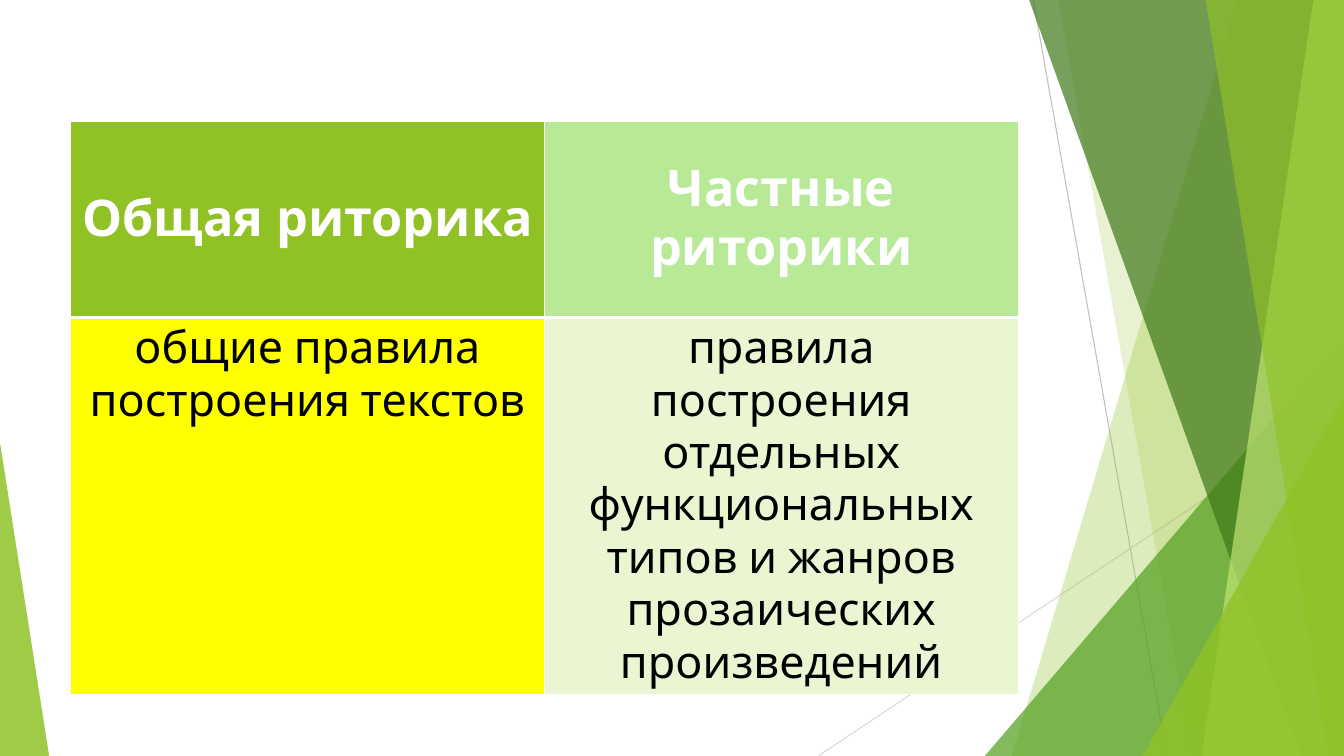
import pptx
import pptx.dml.color
import pptx.enum.shapes
import pptx.enum.text
import pptx.oxml
import pptx.oxml.ns
import pptx.util
from lxml import etree

Cm = pptx.util.Cm
Pt = pptx.util.Pt
qn = pptx.oxml.ns.qn
rgb = pptx.dml.color.RGBColor.from_string

WIDTH, HEIGHT = 33.87, 19.05
COLORS = {
    "lime": "90C226",
    "green": "54A021",
    "forest": "3F7819",
    "pale_lime": "C0E474",
    "mint": "B7E996",
    "cream": "EAF6D1",
    "yellow": "FFFF00",
    "white": "FFFFFF",
    "black": "000000",
    "gray": "BFBFBF",
    "light_gray": "D9D9D9",
}


def paint(shape, color, opacity):
    shape.shadow.inherit = False
    shape.line.fill.background()
    shape.fill.solid()
    shape.fill.fore_color.rgb = rgb(COLORS[color])
    tint = shape.fill._xPr.find(qn("a:solidFill"))[0]
    etree.SubElement(tint, qn("a:alpha"), val=str(opacity * 1000))


deck = pptx.Presentation()
deck.slide_width, deck.slide_height = Cm(WIDTH), Cm(HEIGHT)
page = deck.slides.add_slide(deck.slide_layouts[6])

for start_x, start_y, end_x, color in [
    (26.04, 0, 29.41, "gray"),
    (WIDTH, 10.24, 20.62, "light_gray"),
]:
    ray = page.shapes.add_connector(
        pptx.enum.shapes.MSO_CONNECTOR.STRAIGHT,
        Cm(start_x), Cm(start_y), Cm(end_x), Cm(HEIGHT),
    )
    ray.line.color.rgb = rgb(COLORS[color])
    ray.line.width = Pt(0.75)
    etree.SubElement(ray._element.spPr, qn("a:effectLst"))

facets = [
    ("band", 31.19, 25.5, "lime", 30),
    ("band", 26.67, 30.05, "lime", 20),
    ("triangle", 24.82, 8.46, "green", 72),
    ("band", 25.93, 32.79, "forest", 70),
    ("band", 33.1, 30.28, "pale_lime", 70),
    ("band", 30.38, 33.48, "lime", 65),
    ("triangle", 28.8, 9.98, "lime", 80),
    ("triangle", 0, 11.15, "lime", 85),
]
for kind, first, second, color, opacity in facets:
    if kind == "band":
        outline = page.shapes.build_freeform(Cm(first), Cm(-0.02))
        corners = [(WIDTH, -0.02), (WIDTH, HEIGHT), (second, HEIGHT)]
        outline.add_line_segments([(Cm(x), Cm(y)) for x, y in corners])
        facet = outline.convert_to_shape()
    else:
        facet_width = WIDTH - first if first else 1.24
        facet = page.shapes.add_shape(
            pptx.enum.shapes.MSO_SHAPE.ISOSCELES_TRIANGLE,
            Cm(first), Cm(second), Cm(facet_width), Cm(HEIGHT - second),
        )
        facet.adjustments[0] = 1 if first else 0
    paint(facet, color, opacity)

rows = [
    (4.93, 36, True, "white", "MIDDLE", {"L": 1, "R": 1, "T": 1, "B": 3},
     [("Общая риторика", "lime"), ("Частные риторики", "mint")]),
    (7.19, 32, False, "black", "TOP", {"L": 1, "R": 1, "T": 3, "B": 1},
     [("общие правила построения текстов", "yellow"),
      ("правила построения отдельных функциональных типов и жанров "
       "прозаических произведений", "cream")]),
]
table = page.shapes.add_table(
    2, 2, Cm(1.78), Cm(3.07), Cm(2 * 11.94), Cm(4.93 + 7.19)
).table
for row_index, (height, size, bold, ink, anchor, borders, cells) in enumerate(rows):
    table.rows[row_index].height = Cm(height)
    for column_index, (text, fill) in enumerate(cells):
        cell = table.cell(row_index, column_index)
        cell.text = text
        cell.vertical_anchor = pptx.enum.text.MSO_ANCHOR[anchor]
        cell.fill.solid()
        cell.fill.fore_color.rgb = rgb(COLORS[fill])
        para = cell.text_frame.paragraphs[0]
        para.alignment = pptx.enum.text.PP_ALIGN.CENTER
        para.font.name = "Karla"
        para.font.size = Pt(size)
        para.font.bold = bold
        para.font.color.rgb = rgb(COLORS[ink])
        properties = cell._tc.get_or_add_tcPr()
        for position, (side, weight) in enumerate(borders.items()):
            border = etree.Element(qn("a:ln" + side), w=str(Pt(weight)))
            border_fill = etree.SubElement(border, qn("a:solidFill"))
            etree.SubElement(border_fill, qn("a:srgbClr"), val=COLORS["white"])
            properties.insert(position, border)

deck.save("out.pptx")
